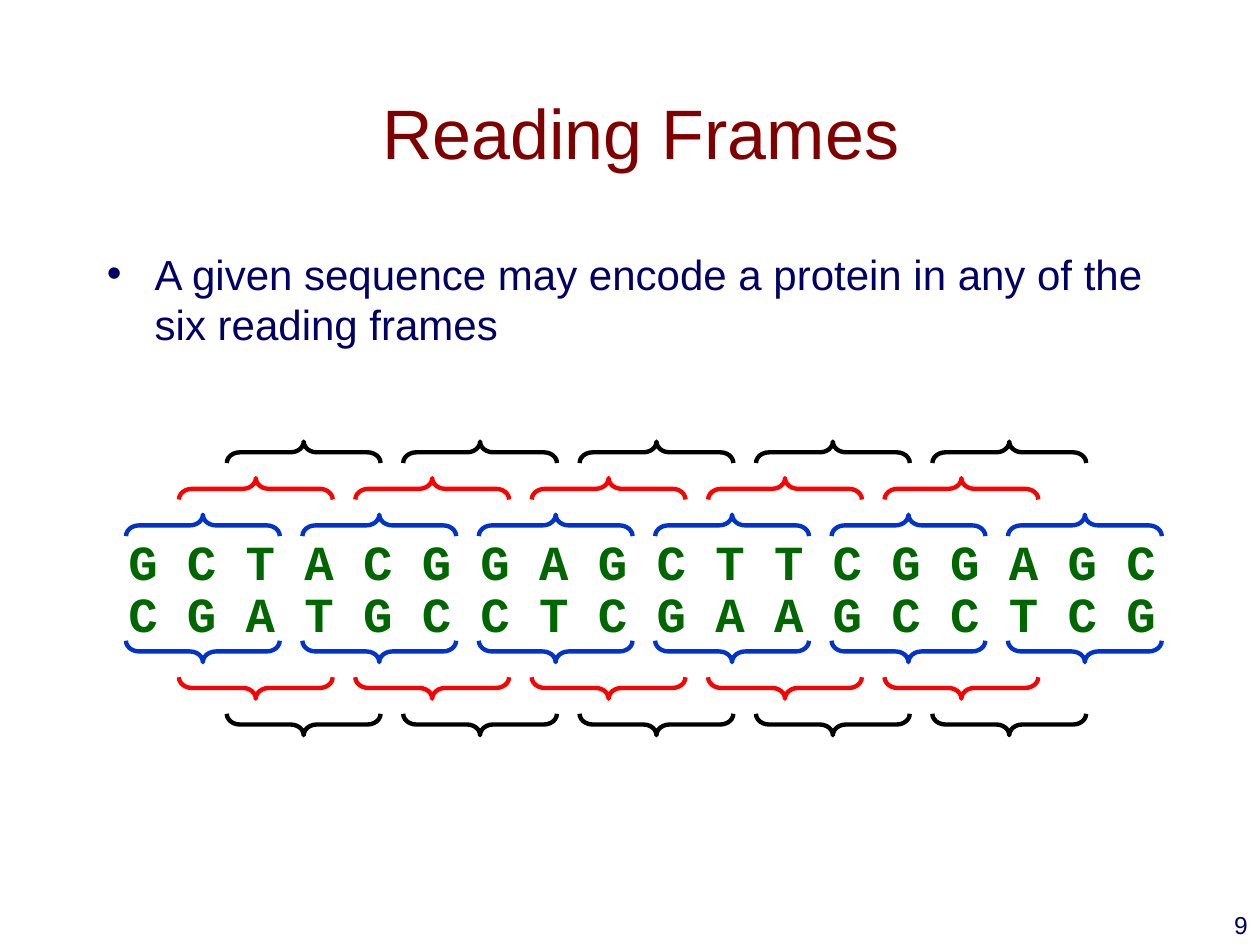
from pptx import Presentation, util as u
from pptx.dml.color import RGBColor
from pptx.enum import shapes, text
from pptx.oxml import parse_xml
from pptx.oxml.ns import nsdecls

WIDE, HIGH = 10, 7.5
CODON, LEVEL = 1.4, 0.29
SPAN, DEPTH = 1.22, 0.17
FRAMES = [("0033CC", 0, 6), ("FF0000", 0.42, 5), ("000000", 0.8, 5)]
STRANDS = ["GCTACGGAGCTTCGGAGC", "CGATGCCTCGAAGCCTCG"]


def paint(code):
    """Turn a hex string into a colour."""
    return RGBColor.from_string(code)


def write(slide, box, words, size, color, face="Arial", bold=False,
          align=text.PP_ALIGN.LEFT, anchor=text.MSO_ANCHOR.TOP, wrap=True):
    """Place one paragraph in a box and return the paragraph."""
    frame = slide.shapes.add_textbox(*map(u.Inches, box)).text_frame
    frame.word_wrap, frame.vertical_anchor = wrap, anchor
    para = frame.paragraphs[0]
    para.alignment = align
    run = para.add_run()
    run.text = words
    for key, val in dict(size=u.Pt(size), name=face, bold=bold).items():
        setattr(run.font, key, val)
    run.font.color.rgb = paint(color)
    return para


def head(slide, box):
    """Write the title in the middle of its box."""
    write(slide, box, "Reading Frames", 40, "800000",
          align=text.PP_ALIGN.CENTER, anchor=text.MSO_ANCHOR.MIDDLE)


def body(slide, box):
    """Write the bullet point with a hanging indent."""
    para = write(slide, box, "A given sequence may encode a protein in any "
                 "of the six reading frames", 24, "000066")
    para.space_before = u.Pt(4.8)
    props = para._p.get_or_add_pPr()
    indent = u.Inches(0.38)
    props.set("marL", str(indent))
    props.set("indent", str(-indent))
    for tag in ('<a:buFont %s typeface="Arial"/>', '<a:buChar %s char="•"/>'):
        props.append(parse_xml(tag % nsdecls("a")))


def brace(slide, mid, row, color, below):
    """Draw one brace around a centre, pointing up or down."""
    box = mid - DEPTH / 2, row - SPAN / 2, DEPTH, SPAN
    item = slide.shapes.add_shape(
        shapes.MSO_SHAPE.LEFT_BRACE, *map(u.Inches, box))
    item.rotation = 270 if below else 90
    item.adjustments[0] = 0.608
    item.shadow.inherit = False
    item.fill.background()
    item.line.color.rgb = paint(color)
    item.line.width = u.Pt(2.5)


def strands(slide, box):
    """Write both strands with three reading frames on each side."""
    left, top, width, high = box
    for row, bases in enumerate(STRANDS):
        write(slide, (left, top + 0.41 * row, width, 0.57), " ".join(bases),
              28, "006600", "Courier New", True, wrap=False)
    for below, edge, way in ((False, top, -1), (True, top + high, 1)):
        for level, (color, shift, count) in enumerate(FRAMES):
            for spot in range(count):
                mid = left + CODON / 2 + shift + CODON * spot - 0.01
                brace(slide, mid, edge + way * LEVEL * level, color, below)


def number(slide, box):
    """Write the page number at the right edge."""
    write(slide, box, "9", 14, "000066", align=text.PP_ALIGN.RIGHT)


def main():
    """Build the slide and save it."""
    deck = Presentation()
    deck.slide_width, deck.slide_height = u.Inches(WIDE), u.Inches(HIGH)
    slide = deck.slides.add_slide(deck.slide_layouts[6])
    head(slide, (WIDE / 12, HIGH / 18, WIDE * 0.85, HIGH / 6))
    body(slide, (WIDE * 0.075, 1.92, WIDE * 0.85, HIGH * 0.6))
    strands(slide, (0.92, 4.17, 8.37, 1))
    number(slide, (7.92, 7.17, WIDE - 7.92, HIGH / 15))
    deck.save("out.pptx")


if __name__ == "__main__":
    main()
